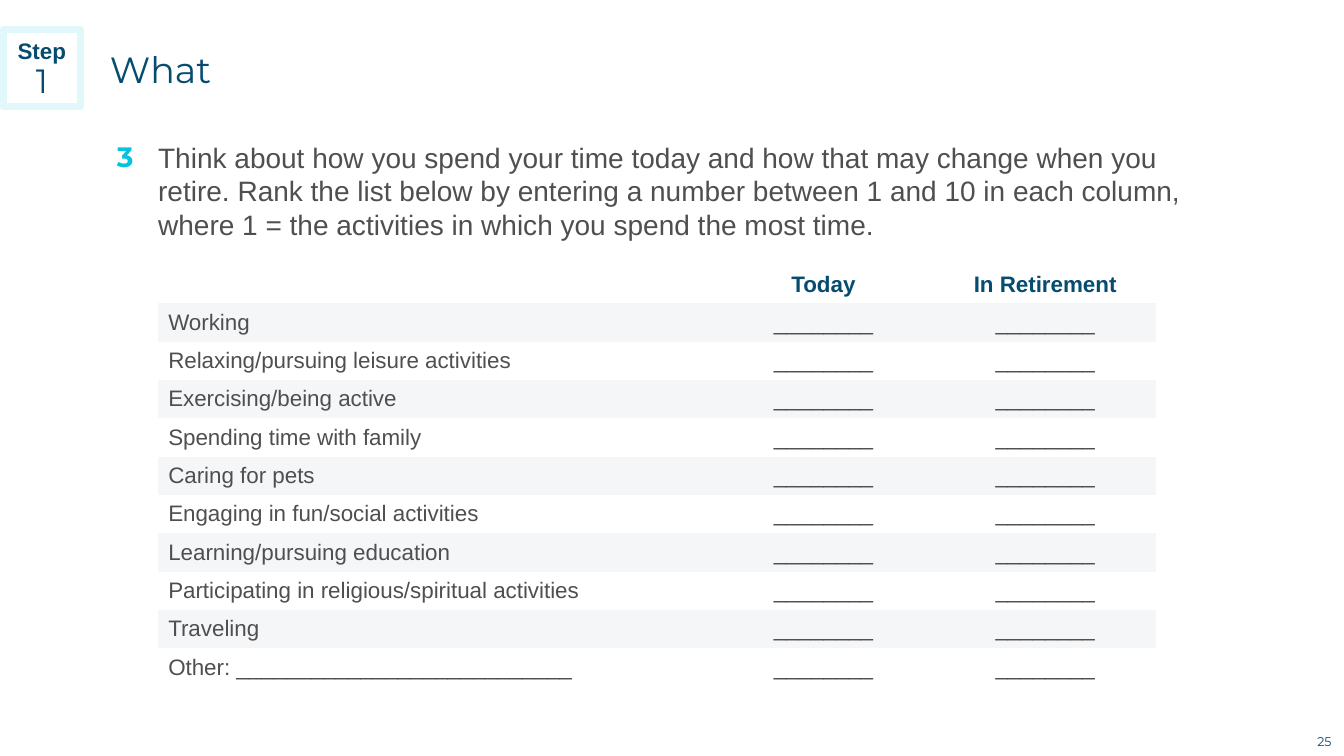
from dataclasses import dataclass

import pptx
import pptx.dml.color
import pptx.enum.shapes
import pptx.enum.text
import pptx.oxml.ns
import pptx.util

Pt = pptx.util.Pt
Align = pptx.enum.text.PP_ALIGN
Anchor = pptx.enum.text.MSO_ANCHOR

NAVY = pptx.dml.color.RGBColor(0x05, 0x4C, 0x70)
CYAN = pptx.dml.color.RGBColor(0x05, 0xC3, 0xDE)
PALE_CYAN = pptx.dml.color.RGBColor(0xE1, 0xF8, 0xFB)
GREY = pptx.dml.color.RGBColor(0x4F, 0x4F, 0x4F)
BAND = pptx.dml.color.RGBColor(0xF4, 0xF6, 0xF8)
WHITE = pptx.dml.color.RGBColor(0xFF, 0xFF, 0xFF)

PLAIN_TABLE_STYLE = "{2D5ABB26-0587-4C30-8999-92F81FD0307C}"
ROW_HEIGHT = 27.36
COLUMN_WIDTHS = (396, 158.4, 158.4)
BLANK = "________"
HEADINGS = ("", "Today", "In Retirement")
ACTIVITIES = (
    "Working",
    "Relaxing/pursuing leisure activities",
    "Exercising/being active",
    "Spending time with family",
    "Caring for pets",
    "Engaging in fun/social activities",
    "Learning/pursuing education",
    "Participating in religious/spiritual activities",
    "Traveling",
    "Other: ___________________________",
)


@dataclass(frozen=True)
class TextStyle:
    size: float
    color: pptx.dml.color.RGBColor
    name: str = "Arial"
    bold: bool = False


@dataclass(frozen=True)
class Label:
    text: str
    box: tuple[float, float, float, float]
    style: TextStyle
    align: Align = Align.LEFT
    anchor: Anchor = Anchor.TOP


HEADING = TextStyle(16, NAVY, bold=True)
ENTRY = TextStyle(16, GREY)
TITLE = Label("What", (78.5, 20.2, 803.5, 58.3),
              TextStyle(26, NAVY, "Montserrat"), anchor=Anchor.MIDDLE)
LABELS = (
    Label("25", (933.8, 520.6, 24.5, 18), TextStyle(9, NAVY, "Montserrat"),
          Align.CENTER, Anchor.MIDDLE),
    Label("Think about how you spend your time today and how that may change "
          "when you retire. Rank the list below by entering a number between "
          "1 and 10 in each column, where 1 = the activities in which you "
          "spend the most time.", (113, 100, 741.6, 72.7), TextStyle(20, GREY)),
    Label("3", (83.5, 100, 28.8, 24.5),
          TextStyle(20, CYAN, "Montserrat", bold=True)),
)


def write(paragraph, text: str, style: TextStyle, align: Align) -> None:
    paragraph.alignment = align
    run = paragraph.add_run()
    run.text = text
    font_format = {"size": Pt(style.size), "name": style.name, "bold": style.bold}
    for attribute, value in font_format.items():
        setattr(run.font, attribute, value)
    run.font.color.rgb = style.color


def format_frame(frame, anchor: Anchor, top: float = 0) -> None:
    frame_format = {
        "word_wrap": True,
        "auto_size": pptx.enum.text.MSO_AUTO_SIZE.NONE,
        "vertical_anchor": anchor,
        "margin_left": 0, "margin_top": Pt(top),
        "margin_right": 0, "margin_bottom": 0,
    }
    for attribute, value in frame_format.items():
        setattr(frame, attribute, value)


def fill_label(shape, label: Label) -> None:
    for side, length in zip(("left", "top", "width", "height"), label.box):
        setattr(shape, side, Pt(length))
    format_frame(shape.text_frame, label.anchor)
    write(shape.text_frame.paragraphs[0], label.text, label.style, label.align)


def add_ranking_table(slide) -> None:
    rows = [HEADINGS] + [(activity, BLANK, BLANK) for activity in ACTIVITIES]
    holder = slide.shapes.add_table(
        len(rows), len(COLUMN_WIDTHS), Pt(113), Pt(189.4),
        Pt(sum(COLUMN_WIDTHS)), Pt(ROW_HEIGHT * len(rows)))
    style_id = holder.element.find(".//" + pptx.oxml.ns.qn("a:tableStyleId"))
    style_id.text = PLAIN_TABLE_STYLE
    ranking = holder.table
    ranking.first_row = ranking.horz_banding = False
    for column, width in zip(ranking.columns, COLUMN_WIDTHS):
        column.width = Pt(width)
    for r, texts in enumerate(rows):
        ranking.rows[r].height = Pt(ROW_HEIGHT)
        for c, text in enumerate(texts):
            cell = ranking.cell(r, c)
            cell.vertical_anchor = Anchor.MIDDLE
            if r % 2:
                cell.fill.solid()
                cell.fill.fore_color.rgb = BAND
            else:
                cell.fill.background()
            if text:
                write(cell.text_frame.paragraphs[0], text,
                      ENTRY if r else HEADING,
                      Align.CENTER if c else Align.LEFT)
            else:
                cell.margin_top = cell.margin_bottom = 0


def add_step_badge(slide) -> None:
    badge = slide.shapes.add_shape(
        pptx.enum.shapes.MSO_SHAPE.RECTANGLE, Pt(2.2), Pt(21), Pt(55.4), Pt(55.4))
    badge.shadow.inherit = False
    badge.fill.solid()
    badge.fill.fore_color.rgb = WHITE
    badge.line.color.rgb = PALE_CYAN
    badge.line.width = Pt(5)
    frame = badge.text_frame
    format_frame(frame, Anchor.MIDDLE, top=3.6)
    write(frame.paragraphs[0], "Step", HEADING, Align.CENTER)
    write(frame.add_paragraph(), "1", TextStyle(24, NAVY, "Montserrat"),
          Align.CENTER)
    for paragraph in frame.paragraphs:
        paragraph.line_spacing = 0.9


def main() -> None:
    deck = pptx.Presentation()
    deck.slide_width, deck.slide_height = Pt(960), Pt(540)
    slide = deck.slides.add_slide(deck.slide_layouts.get_by_name("Title Only"))
    fill_label(slide.shapes.title, TITLE)
    for label in LABELS:
        fill_label(slide.shapes.add_textbox(0, 0, 0, 0), label)
    add_ranking_table(slide)
    add_step_badge(slide)
    deck.save("out.pptx")


if __name__ == "__main__":
    main()
